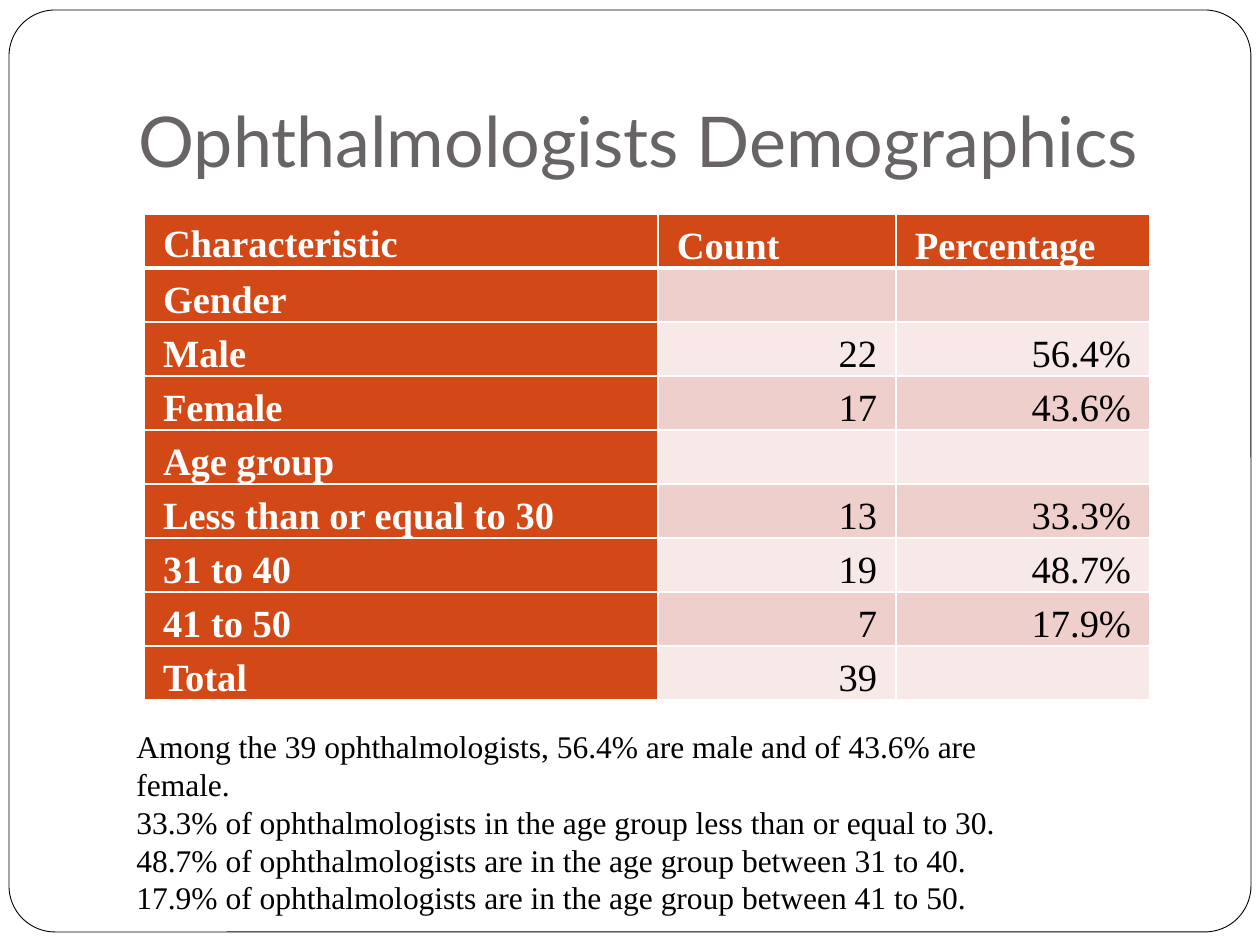
from dataclasses import dataclass

from lxml.etree import SubElement
from pptx import Presentation
from pptx.dml.color import RGBColor
from pptx.enum.shapes import MSO_SHAPE as Shape
from pptx.enum.text import MSO_ANCHOR as Anchor, MSO_AUTO_SIZE as AutoSize, PP_ALIGN as Align
from pptx.oxml.ns import qn
from pptx.util import Emu, Pt

EMU_PER_PX = 914400 / 126
WHITE = RGBColor(0xFF, 0xFF, 0xFF)
BLACK = RGBColor(0x00, 0x00, 0x00)
TITLE_GREY = RGBColor(0x69, 0x64, 0x64)
ORANGE = RGBColor(0xD3, 0x48, 0x17)
BAND_DARK = RGBColor(0xEF, 0xCF, 0xCC)
BAND_LIGHT = RGBColor(0xF7, 0xE9, 0xE8)
SERIF = "Times New Roman"


@dataclass(frozen=True)
class Box:
    """A rectangle on the slide in px."""

    left: int
    top: int
    width: int
    height: int

    def emu(self) -> tuple:
        return tuple(px(value) for value in (self.left, self.top, self.width, self.height))


@dataclass(frozen=True)
class Row:
    """One table row of a label and two values."""

    label: str
    count: str = ""
    percentage: str = ""

    def texts(self) -> tuple:
        return self.label, self.count, self.percentage


FRAME = Box(9, 10, 1242, 922)
TITLE = Box(126, 38, 1071, 157)
TABLE = Box(144, 214, 1006, 486)
FINDINGS = Box(124, 721, 891, 165)
COLUMN_WIDTHS = (514, 238, 254)
ROWS = (
    Row("Characteristic", "Count", "Percentage"),
    Row("Gender"),
    Row("Male", "22", "56.4%"),
    Row("Female", "17", "43.6%"),
    Row("Age group"),
    Row("Less than or equal to 30", "13", "33.3%"),
    Row("31 to 40", "19", "48.7%"),
    Row("41 to 50", "7", "17.9%"),
    Row("Total", "39"),
)
FINDING_LINES = (
    "Among the 39 ophthalmologists, 56.4% are male and of 43.6% are female.",
    "33.3% of ophthalmologists in the age group less than or equal to 30.",
    "48.7% of ophthalmologists are in the age group between 31 to 40.",
    "17.9% of ophthalmologists are in the age group between 41 to 50.",
)


def px(value: int) -> Emu:
    """Turn px into EMU."""
    return Emu(round(value * EMU_PER_PX))


def set_font(paragraph, name: str, size: int, color: RGBColor, bold: bool = False) -> None:
    """Set the font of a whole paragraph."""
    font = paragraph.font
    font.name, font.size, font.bold = name, Pt(size), bold
    font.color.rgb = color


def add_frame(slide) -> None:
    """Draw the rounded page frame behind everything."""
    frame = slide.shapes.add_shape(Shape.ROUNDED_RECTANGLE, *FRAME.emu())
    frame.adjustments[0] = 0.05
    frame.shadow.inherit = False
    frame.fill.solid()
    frame.fill.fore_color.rgb = WHITE
    frame.line.color.rgb = BLACK
    frame.line.width = Pt(0.5)
    slide.shapes.title.element.addprevious(frame.element)


def fill_title(slide) -> None:
    """Place and format the title placeholder."""
    title = slide.shapes.title
    title.left, title.top, title.width, title.height = TITLE.emu()
    text_frame = title.text_frame
    text_frame.text = "Ophthalmologists Demographics"
    text_frame.vertical_anchor = Anchor.BOTTOM
    text_frame.margin_bottom = px(13)
    text_frame.auto_size = AutoSize.NONE
    paragraph = text_frame.paragraphs[0]
    paragraph.alignment = Align.LEFT
    set_font(paragraph, "Lato", 40, TITLE_GREY)


def set_borders(cell, top: int, bottom: int) -> None:
    """Give a cell white borders with the given top and bottom widths in points."""
    properties = cell._tc.get_or_add_tcPr()
    for side, width in (("L", 1), ("R", 1), ("T", top), ("B", bottom)):
        line = SubElement(properties, qn(f"a:ln{side}"), w=str(Pt(width)))
        SubElement(SubElement(line, qn("a:solidFill")), qn("a:srgbClr"), val=str(WHITE))


def format_cell(cell, text: str, row: int, column: int) -> None:
    """Write one table cell and style it by its place."""
    is_heading = row == 0 or column == 0
    set_borders(cell, top=3 if row == 1 else 1, bottom=3 if row == 0 else 1)
    cell.fill.solid()
    cell.fill.fore_color.rgb = ORANGE if is_heading else BAND_DARK if row % 2 else BAND_LIGHT
    cell.margin_left = cell.margin_right = px(19)
    cell.margin_top = cell.margin_bottom = 0
    cell.vertical_anchor = Anchor.MIDDLE if row == column == 0 else Anchor.BOTTOM
    cell.text = text
    paragraph = cell.text_frame.paragraphs[0]
    paragraph.line_spacing = 1.15
    paragraph.alignment = Align.LEFT if is_heading else Align.RIGHT
    set_font(paragraph, SERIF, 22, WHITE if is_heading else BLACK, is_heading)


def add_demographics_table(slide) -> None:
    """Add the table of counts and percentages."""
    shape = slide.shapes.add_table(len(ROWS), len(COLUMN_WIDTHS), *TABLE.emu())
    table = shape.table
    table.first_col = True
    for column, width in zip(table.columns, COLUMN_WIDTHS):
        column.width = px(width)
    for row_index, row in enumerate(ROWS):
        table.rows[row_index].height = px(TABLE.height // len(ROWS))
        for column_index, text in enumerate(row.texts()):
            format_cell(table.cell(row_index, column_index), text, row_index, column_index)


def add_findings(slide) -> None:
    """Add the sentences below the table."""
    text_frame = slide.shapes.add_textbox(*FINDINGS.emu()).text_frame
    text_frame.word_wrap = True
    text_frame.text = "\n".join(FINDING_LINES)
    for paragraph in text_frame.paragraphs:
        set_font(paragraph, SERIF, 18, BLACK)


def main() -> None:
    """Build and save the slide."""
    presentation = Presentation()
    presentation.slide_width, presentation.slide_height = px(1260), px(945)
    slide = presentation.slides.add_slide(presentation.slide_layouts[5])
    add_frame(slide)
    fill_title(slide)
    add_demographics_table(slide)
    add_findings(slide)
    presentation.save("out.pptx")


if __name__ == "__main__":
    main()
